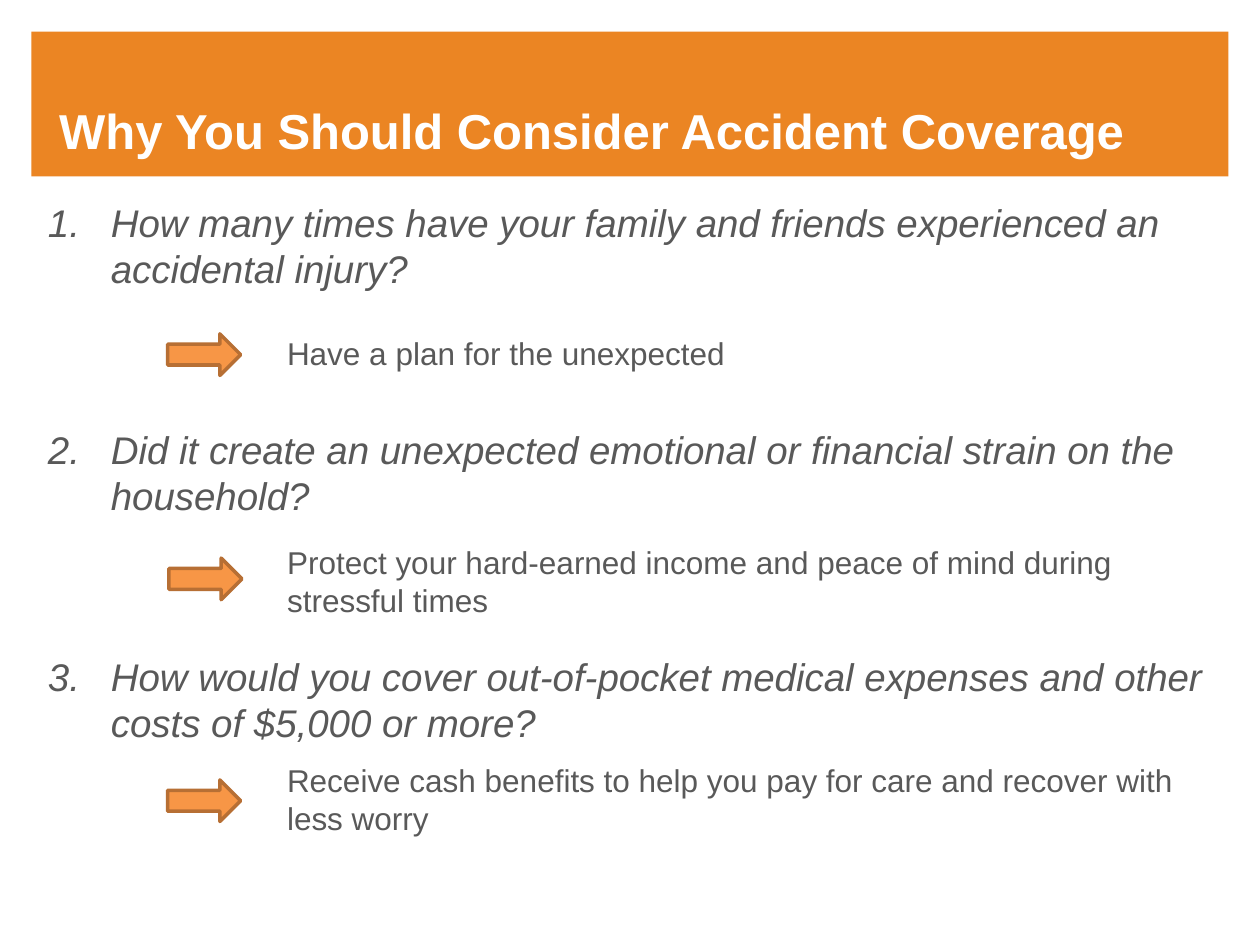
from pptx import Presentation
from pptx.dml.color import RGBColor
from pptx.enum import shapes, text
from pptx.oxml import xmlchemy
from pptx.util import Inches, Pt

COLORS = {
    "banner": "EB8523",
    "title": "FFFFFF",
    "body": "595959",
    "arrow": "F79646",
    "arrow_line": "B76F34",
}
FONTS = {
    "title": {"name": "Arial", "size": Pt(28), "bold": True, "italic": False},
    "question": {"name": "Arial", "size": Pt(22), "bold": False, "italic": True},
    "answer": {"name": "Arial", "size": Pt(18), "bold": False, "italic": False},
}
QUESTIONS = [
    "How many times have your family and friends experienced an accidental injury?",
    "Did it create an unexpected emotional or financial strain on the household?",
    "How would you cover out-of-pocket medical expenses and other costs of $5,000 or more?",
]
# Answer text, arrow left and top, text box top, width and height
ANSWERS = [
    ("Have a plan for the unexpected", 1.33, 2.65, 2.6, 4.67, 0.4),
    ("Protect your hard-earned income and peace of mind during stressful times",
     1.34, 4.43, 4.26, 6.98, 0.71),
    ("Receive cash benefits to help you pay for care and recover with less worry",
     1.33, 6.19, 5.99, 7.66, 0.71),
]


class SlideBuilder:
    """Holds the style and the current slide."""

    def __init__(self, slide):
        self.slide = slide

    def color(self, name):
        return RGBColor.from_string(COLORS[name])

    def place(self, shape, left, top, width, height):
        shape.left, shape.top = Inches(left), Inches(top)
        shape.width, shape.height = Inches(width), Inches(height)

    def format(self, paragraph, style, color):
        paragraph.alignment = text.PP_ALIGN.LEFT
        for run in paragraph.runs:
            for attribute, value in FONTS[style].items():
                setattr(run.font, attribute, value)
            run.font.color.rgb = self.color(color)

    def preset(self, parent, kind, box, fill, line=None):
        shape = parent.add_shape(kind, *map(Inches, box))
        shape.shadow.inherit = False
        shape.fill.solid()
        shape.fill.fore_color.rgb = self.color(fill)
        if line:
            shape.line.color.rgb = self.color(line)
            shape.line.width = Pt(2)
        else:
            shape.line.fill.background()
        return shape

    def banner(self, *box):
        shape = self.preset(self.slide.shapes, shapes.MSO_SHAPE.RECTANGLE, box, "banner")
        # Send the banner behind the placeholders
        self.slide.shapes._spTree.insert(2, shape._element)

    def title(self, wording, *box):
        title = self.slide.shapes.title
        self.place(title, *box)
        frame = title.text_frame
        frame.text = wording
        settings = {
            "margin_left": Inches(0.2), "margin_top": 0,
            "margin_right": 0, "margin_bottom": Inches(0.1),
            "vertical_anchor": text.MSO_ANCHOR.TOP,
            "auto_size": text.MSO_AUTO_SIZE.NONE,
        }
        for attribute, value in settings.items():
            setattr(frame, attribute, value)
        self.format(frame.paragraphs[0], "title", "title")

    def numbered_list(self, items, gap, *box):
        body = self.slide.placeholders[1]
        self.place(body, *box)
        frame = body.text_frame
        frame.text = "\n".join(items)
        frame.auto_size = text.MSO_AUTO_SIZE.NONE
        for paragraph in frame.paragraphs:
            properties = paragraph._p.get_or_add_pPr()
            properties.set("marL", str(Inches(0.5)))
            properties.set("indent", str(-Inches(0.5)))
            number = xmlchemy.OxmlElement("a:buAutoNum")
            number.set("type", "arabicPeriod")
            properties.append(number)
            paragraph.space_before = Pt(0)
            paragraph.space_after = Pt(gap)
            self.format(paragraph, "question", "body")
        frame.paragraphs[-1].space_after = Pt(8)

    def answer(self, wording, arrow_left, arrow_top, top, width, height):
        group = self.slide.shapes.add_group_shape()
        self.preset(group.shapes, shapes.MSO_SHAPE.RIGHT_ARROW,
                    (arrow_left, arrow_top, 0.58, 0.33), "arrow", "arrow_line")
        box = group.shapes.add_textbox(*map(Inches, (2.18, top, width, height)))
        frame = box.text_frame
        frame.word_wrap = True
        frame.auto_size = text.MSO_AUTO_SIZE.SHAPE_TO_FIT_TEXT
        frame.text = wording
        self.format(frame.paragraphs[0], "answer", "body")


def main():
    presentation = Presentation()
    presentation.slide_width, presentation.slide_height = Inches(10), Inches(7.5)
    slide = presentation.slides.add_slide(presentation.slide_layouts[1])
    builder = SlideBuilder(slide)

    # Heading
    builder.banner(0.25, 0.25, 9.5, 1.15)
    builder.title("Why You Should Consider Accident Coverage", 0.27, 0.8, 9.08, 1)

    # Questions, spaced to leave room for the answers
    builder.numbered_list(QUESTIONS, 76.8, 0.28, 1.53, 9.55, 5.17)

    # Answers with arrows
    for answer in ANSWERS:
        builder.answer(*answer)

    presentation.save("out.pptx")


if __name__ == "__main__":
    main()
